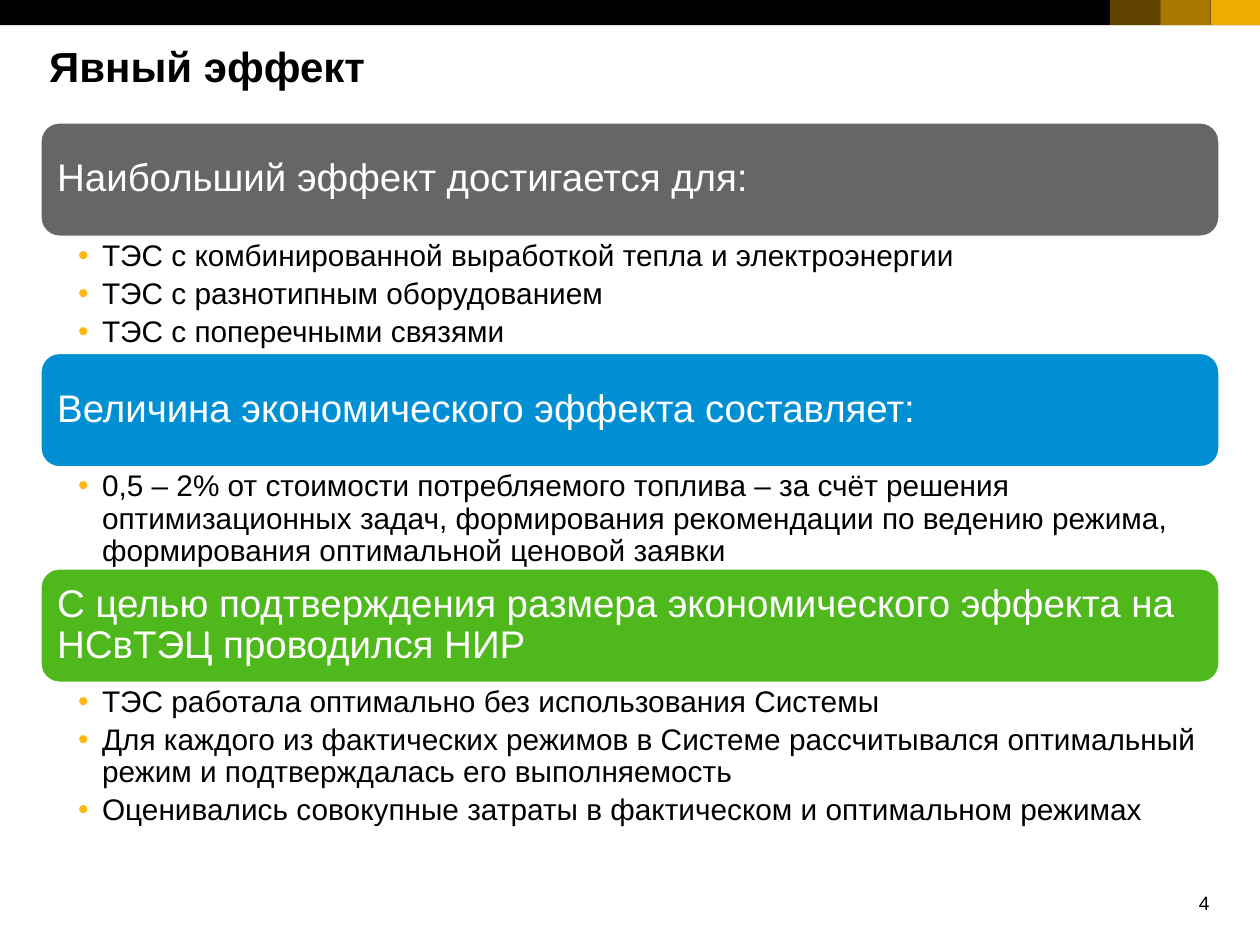
from dataclasses import dataclass

from lxml import etree
from pptx import Presentation
from pptx.dml.color import RGBColor
from pptx.enum.shapes import MSO_SHAPE
from pptx.enum.text import MSO_ANCHOR, PP_ALIGN
from pptx.oxml.ns import qn
from pptx.util import Inches, Pt

RECT, ROUND_RECT = MSO_SHAPE.RECTANGLE, MSO_SHAPE.ROUNDED_RECTANGLE
TOP, MIDDLE = MSO_ANCHOR.TOP, MSO_ANCHOR.MIDDLE
LEFT, RIGHT = PP_ALIGN.LEFT, PP_ALIGN.RIGHT


@dataclass(frozen=True)
class Theme:
    font: str = "Arial"
    black: str = "000000"
    white: str = "FFFFFF"
    gold: str = "F0AB00"
    bullet: str = "FDB913"
    gray: str = "666666"
    blue: str = "008FD3"
    green: str = "4FB81C"
    title: int = 24
    heading: int = 22
    body: int = 17
    number: int = 11


THEME = Theme()

SECTIONS = [
    ("Наибольший эффект достигается для:", THEME.gray, 0.92, [
        "ТЭС с комбинированной выработкой тепла и электроэнергии",
        "ТЭС с разнотипным оборудованием",
        "ТЭС с поперечными связями",
    ]),
    ("Величина экономического эффекта составляет:", THEME.blue, 0.8, [
        "0,5 – 2% от стоимости потребляемого топлива – за счёт решения "
        "оптимизационных задач, формирования рекомендации по ведению режима, "
        "формирования оптимальной ценовой заявки",
    ]),
    ("С целью подтверждения размера экономического эффекта на НСвТЭЦ проводился НИР",
     THEME.green, 1.17, [
        "ТЭС работала оптимально без использования Системы",
        "Для каждого из фактических режимов в Системе рассчитывался оптимальный "
        "режим и подтверждалась его выполняемость",
        "Оценивались совокупные затраты в фактическом и оптимальном режимах",
    ]),
]


def inches(*values):
    return [Inches(v) for v in values]


def add_block(s, kind, box, fill, alpha=100):
    sp = s.shapes.add_shape(kind, *inches(*box))
    sp.shadow.inherit = False
    sp.fill.solid()
    sp.fill.fore_color.rgb = RGBColor.from_string(fill)
    sp.line.fill.background()
    if alpha < 100:
        color = sp.fill._xPr.find(qn("a:solidFill"))[0]
        etree.SubElement(color, qn("a:alpha"), val=str(alpha * 1000))
    return sp


def set_frame(tf, insets=(0, 0, 0, 0), anchor=TOP):
    tf.word_wrap = True
    tf.vertical_anchor = anchor
    tf.margin_left, tf.margin_top, tf.margin_right, tf.margin_bottom = inches(*insets)


def set_text(p, text, size, color, bold=False, align=LEFT):
    p.text = text
    p.alignment = align
    font = p.runs[0].font
    font.name, font.size, font.bold = THEME.font, Pt(size), bold
    font.color.rgb = RGBColor.from_string(color)


def add_bullet(p):
    pPr = p._p.get_or_add_pPr()
    pPr.set("marL", str(Inches(0.19)))
    pPr.set("indent", str(-Inches(0.19)))
    color = etree.SubElement(pPr, qn("a:buClr"))
    etree.SubElement(color, qn("a:srgbClr"), val=THEME.bullet)
    etree.SubElement(pPr, qn("a:buFont"), typeface=THEME.font)
    etree.SubElement(pPr, qn("a:buChar"), char="•")


def add_label(s, box, text, size, bold=False, align=LEFT):
    tf = s.shapes.add_textbox(*inches(*box)).text_frame
    set_frame(tf)
    set_text(tf.paragraphs[0], text, size, THEME.black, bold, align)


def add_top_bar(s, box):
    left, top, width, height = box
    add_block(s, RECT, box, THEME.black)
    tile = 0.39
    for i, alpha in enumerate((100, 70, 40)):
        x = left + width - tile - i * 0.4
        add_block(s, RECT, (x, top, tile if i == 0 else 0.4, height), THEME.gold, alpha)


def add_heading(s, box, text, fill):
    sp = add_block(s, ROUND_RECT, box, fill)
    sp.line.color.rgb = RGBColor.from_string(THEME.white)
    sp.line.width = Pt(1.5)
    tf = sp.text_frame
    set_frame(tf, (0.09, 0.09, 0.09, 0.09), MIDDLE)
    p = tf.paragraphs[0]
    set_text(p, text, THEME.heading, THEME.white)
    p.line_spacing = 0.9


def add_bullets(s, box, items):
    tf = s.shapes.add_textbox(*inches(*box)).text_frame
    set_frame(tf, (0.3, 0.03, 0.17, 0.03))
    for i, item in enumerate(items):
        p = tf.add_paragraph() if i else tf.paragraphs[0]
        add_bullet(p)
        set_text(p, item, THEME.body, THEME.black)
        p.level = 1
        p.line_spacing = 0.9
        p.space_after = Pt(3.4)


def add_sections(s, box):
    left, top, width, _ = box
    heading_height = 0.91
    for heading, fill, body_height, items in SECTIONS:
        add_heading(s, (left, top, width, heading_height), heading, fill)
        top += heading_height
        add_bullets(s, (left, top, width, body_height), items)
        top += body_height


def main():
    prs = Presentation()
    prs.slide_width, prs.slide_height = inches(10, 7.5)
    s = prs.slides.add_slide(prs.slide_layouts[6])
    add_label(s, (9.32, 7.07, 0.28, 0.19), "4", THEME.number, align=RIGHT)
    add_top_bar(s, (0, 0, 10, 0.2))
    add_label(s, (0.39, 0.32, 9.61, 0.99), "Явный эффект", THEME.title, bold=True)
    add_sections(s, (0.32, 0.97, 9.36, 5.63))
    prs.save("out.pptx")


if __name__ == "__main__":
    main()
